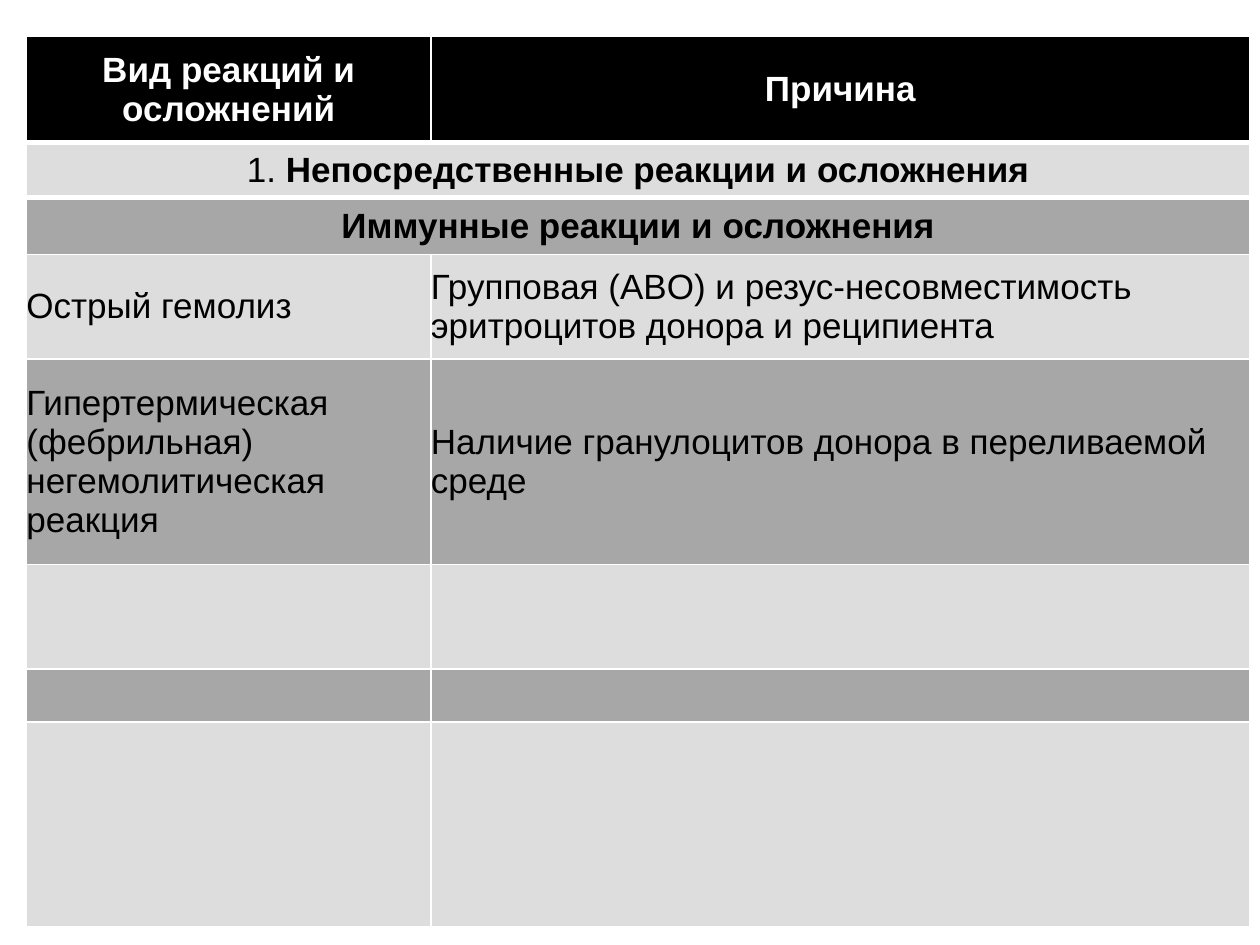
import pptx
import pptx.util
import pptx.dml.color
import pptx.enum.text
import pptx.oxml
import pptx.oxml.ns
import lxml.etree

Inches, Pt = pptx.util.Inches, pptx.util.Pt
ALIGN = pptx.enum.text.PP_ALIGN

# Content: each cell is a list of (text, bold) runs; one cell in a row spans the table
ROWS = [
    [[("Вид реакций и осложнений", True)], [("Причина", True)]],
    [[("1. ", False), ("Непосредственные реакции и осложнения", True)]],
    [[("Иммунные реакции и осложнения", True)]],
    [[("Острый гемолиз", False)],
     [("Групповая (ABO) и резус-несовместимость эритроцитов донора и реципиента", False)]],
    [[("Гипертермическая (фебрильная) негемолитическая реакция", False)],
     [("Наличие гранулоцитов донора в переливаемой среде", False)]],
    [[], []],
    [[], []],
    [[], []],
]
LEFT, TOP = 0.21, 0.29
COLUMN_WIDTHS = [3.21, 6.5]
ROW_HEIGHTS = [0.84, 0.44, 0.45, 0.83, 1.63, 0.83, 0.42, 1.63]
HEADER_FILL, BAND_FILLS = "000000", ["DDDDDD", "A7A7A7"]
HEADING_ROWS = 3
THICK_RULES = (1, 2)  # horizontal rules, counted from the table's top edge


def color(hex_string):
    return pptx.dml.color.RGBColor.from_string(hex_string)


def add_border(cell, side, width):
    properties = cell._tc.get_or_add_tcPr()
    line = lxml.etree.SubElement(properties, pptx.oxml.ns.qn(f"a:ln{side}"), w=str(Pt(width)))
    fill = lxml.etree.SubElement(line, pptx.oxml.ns.qn("a:solidFill"))
    lxml.etree.SubElement(fill, pptx.oxml.ns.qn("a:srgbClr"), val="FFFFFF")


def style_cell(cell, row):
    cell.margin_left = cell.margin_right = cell.margin_top = cell.margin_bottom = 0
    cell.vertical_anchor = pptx.enum.text.MSO_ANCHOR.MIDDLE
    for side, rule in (("L", None), ("R", None), ("T", row), ("B", row + 1)):
        add_border(cell, side, 3 if rule in THICK_RULES else 1)
    cell.fill.solid()
    cell.fill.fore_color.rgb = color(HEADER_FILL if row == 0 else BAND_FILLS[(row - 1) % 2])


def write_cell(cell, runs, row):
    paragraph = cell.text_frame.paragraphs[0]
    paragraph.alignment = ALIGN.CENTER if row < HEADING_ROWS else ALIGN.LEFT
    for text, bold in runs:
        run = paragraph.add_run()
        run.text = text
        run.font.name, run.font.size, run.font.bold = "Arial", Pt(20), bold
        run.font.color.rgb = color("FFFFFF" if row == 0 else "000000")


def main():
    deck = pptx.Presentation()
    deck.slide_width, deck.slide_height = Inches(10), Inches(7.5)
    slide = deck.slides.add_slide(deck.slide_layouts[6])

    # Table grid
    reactions = slide.shapes.add_table(
        len(ROWS), len(COLUMN_WIDTHS), Inches(LEFT), Inches(TOP),
        Inches(sum(COLUMN_WIDTHS)), Inches(sum(ROW_HEIGHTS))).table
    for column, width in zip(reactions.columns, COLUMN_WIDTHS):
        column.width = Inches(width)
    for row, height in zip(reactions.rows, ROW_HEIGHTS):
        row.height = Inches(height)

    # Cells
    for r, contents in enumerate(ROWS):
        for c in range(len(COLUMN_WIDTHS)):
            style_cell(reactions.cell(r, c), r)
        if len(contents) == 1:
            reactions.cell(r, 0).merge(reactions.cell(r, len(COLUMN_WIDTHS) - 1))
        for c, runs in enumerate(contents):
            if runs:
                write_cell(reactions.cell(r, c), runs, r)

    deck.save("out.pptx")


if __name__ == "__main__":
    main()
